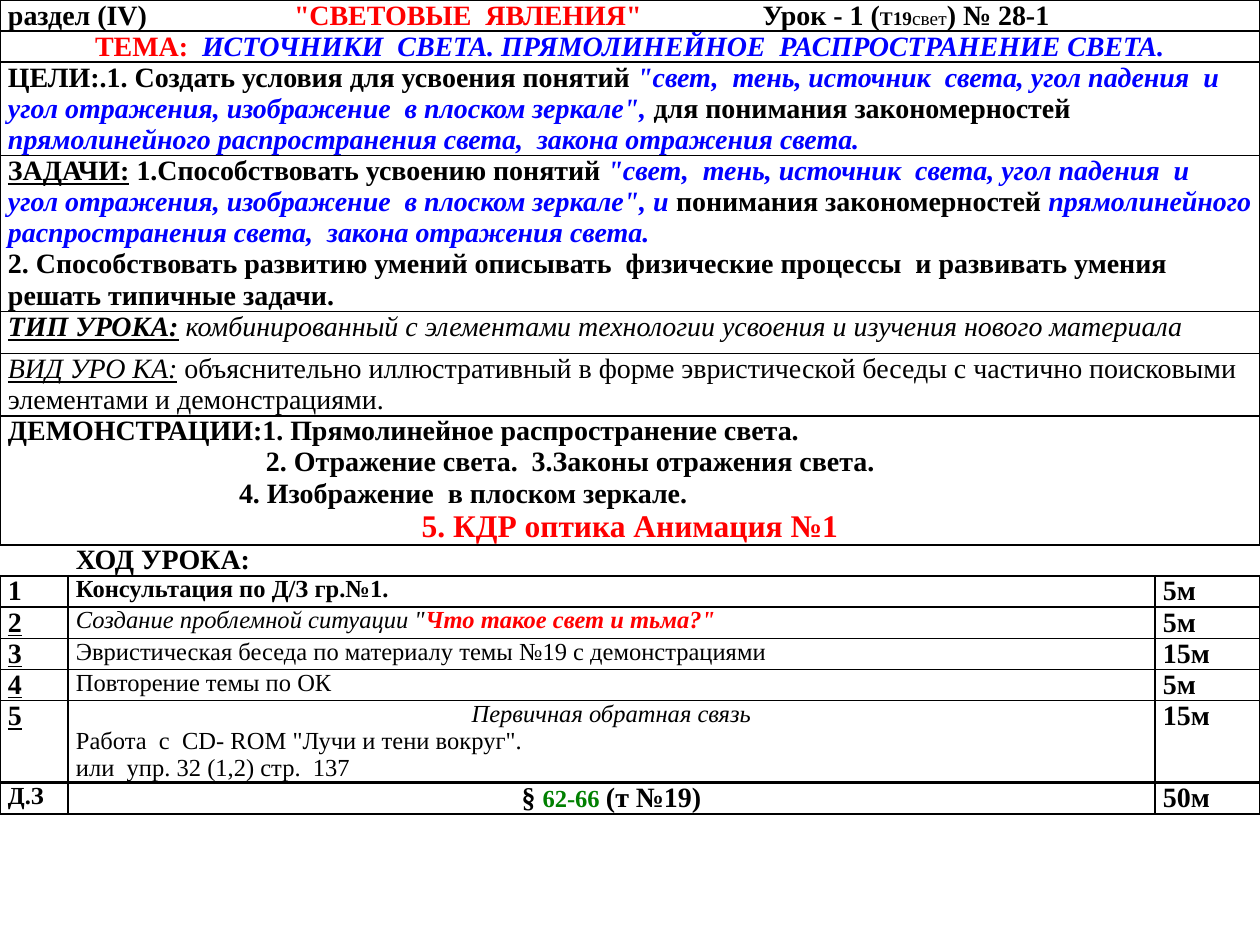
from lxml import etree
from pptx import Presentation
from pptx.dml.color import RGBColor
from pptx.enum.text import PP_ALIGN
from pptx.oxml.ns import qn
from pptx.util import Pt

PX = 914400 / 126
CENTER = PP_ALIGN.CENTER
FONT = "Times New Roman"
COLORS = {"black": "000000", "red": "FF0000", "blue": "0000FF", "green": "008000"}

COLUMNS = [68, 1087, 105]
HEADER_HEIGHTS = [31, 31, 93, 156, 42, 62, 129]
STEP_HEIGHTS = [31, 31, 31, 31, 31, 82, 31]
# Widths in points of the horizontal rules, from the top of the table down
RULES = [1, 1.5, 1.5, 1, 1, 1, 1.5, 1.5, 1.5, 1, 1, 1, 1, 1.5, 1.5]
FRAMED_HEADERS = (1, 6)
INSET = 8


def px(length):
    return round(length * PX)


def run(text, marks="b", color="black", size=16, spacing=0):
    """Describe a run; marks holds any of b, i and u, spacing is in points."""
    return text, marks, color, size, spacing


def para(*runs, align=None, indent=0):
    return runs, align, indent


TERMS = "\"свет,  тень, источник  света, угол падения  и  угол отражения, изображение  в плоском зеркале\", "
LAWS = "прямолинейного распространения света,  закона отражения света."

HEADERS = [
    [para(run("раздел (IV)"), run(" ", spacing=80),
          run("\"СВЕТОВЫЕ  ЯВЛЕНИЯ\"", color="red"), run(" ", spacing=65),
          run("Урок - 1 ("), run("Т19", size=11), run("свет", "", size=11),
          run(") № 28-1"))],
    [para(run("ТЕМА:  ", color="red"),
          run("ИСТОЧНИКИ  СВЕТА. ПРЯМОЛИНЕЙНОЕ  РАСПРОСТРАНЕНИЕ СВЕТА.", "bi", "blue"),
          align=CENTER)],
    [para(run("ЦЕЛИ:.1. Создать условия для усвоения понятий "),
          run(TERMS, "bi", "blue"),
          run("для понимания закономерностей  "), run(LAWS, "bi", "blue"))],
    [para(run("ЗАДАЧИ:", "bu"), run(" 1.Способствовать усвоению понятий "),
          run(TERMS + "и ", "bi", "blue"),
          run("понимания закономерностей"), run(" " + LAWS, "bi", "blue")),
     para(run("2. Способствовать развитию умений описывать  физические процессы  "
              "и развивать умения решать типичные задачи."))],
    [para(run("ТИП УРОКА:", "biu"),
          run(" комбинированный с элементами технологии усвоения "
              "и изучения нового материала", "i"))],
    [para(run("ВИД УРО КА:", "iu"),
          run(" объяснительно иллюстративный в форме эвристической беседы "
              "с частично поисковыми элементами и демонстрациями.", ""))],
    [para(run("ДЕМОНСТРАЦИИ:1. Прямолинейное распространение света.")),
     para(run("2. Отражение света.  3.Законы отражения света."), indent=258),
     para(run("4. Изображение  в плоском зеркале."), indent=231),
     para(run("5. КДР оптика Анимация №1", color="red", size=18), align=CENTER)],
]

STEPS = [
    (run("1"), [para(run("Консультация по Д/З гр.№1.", size=14))], "5м"),
    (run("2", "bu"), [para(run("Создание проблемной ситуации \"", "i", size=14),
                           run("Что такое свет и тьма?\"", "bi", "red", 14))], "5м"),
    (run("3", "bu"), [para(run("Эвристическая беседа по материалу темы №19 "
                               "с демонстрациями", "", size=14))], "15м"),
    (run("4", "bu"), [para(run("Повторение темы по ОК", "", size=14))], "5м"),
    (run("5", "bu"), [para(run("Первичная обратная связь", "i", size=14), align=CENTER),
                      para(run("Работа  с  CD- ROM \"Лучи и тени вокруг\".", "", size=14)),
                      para(run("или  упр. 32 (1,2) стр.  137", "", size=14))], "15м"),
    (run("Д.З", size=14), [para(run("§ "), run("62-66 ", color="green", size=14),
                                run("(т №19)"), align=CENTER)], "50м"),
]


def write(cell, paragraphs):
    frame = cell.text_frame
    for number, (runs, align, indent) in enumerate(paragraphs):
        paragraph = frame.add_paragraph() if number else frame.paragraphs[0]
        if align is not None:
            paragraph.alignment = align
        properties = paragraph._p.get_or_add_pPr()
        properties.set("marL", str(px(indent)))
        properties.set("indent", "0")
        for text, marks, color, size, spacing in runs:
            piece = paragraph.add_run()
            piece.text = text
            font = piece.font
            font.name, font.size = FONT, Pt(size)
            font.bold, font.italic, font.underline = (mark in marks for mark in "biu")
            font.color.rgb = RGBColor.from_string(COLORS[color])
            if spacing:
                piece._r.get_or_add_rPr().set("spc", str(spacing * 100))


def format_cell(cell, left, right, top, bottom):
    """Clear the fill, set the insets and draw borders of the given point widths."""
    cell.margin_left = cell.margin_right = px(INSET)
    cell.margin_top = cell.margin_bottom = 0
    properties = cell._tc.get_or_add_tcPr()
    for tag, width in zip(("lnL", "lnR", "lnT", "lnB"), (left, right, top, bottom)):
        line = etree.SubElement(properties, qn("a:" + tag), w=str(Pt(width)))
        if width:
            fill = etree.SubElement(line, qn("a:solidFill"))
            etree.SubElement(fill, qn("a:srgbClr"), val=COLORS["black"])
        else:
            etree.SubElement(line, qn("a:noFill"))
    cell.fill.background()


def side_widths(row):
    """Widths of the four vertical rules that cross a row."""
    title_row = len(HEADERS)
    if row < title_row:
        return [1.5 if row in FRAMED_HEADERS else 1] * 4
    if row == title_row:
        return [0] * 4
    return [1.5, 1, 1, 1.5] if row == title_row + len(STEPS) else [1.5, 1.5, 1, 1]


def write_headers(table):
    for row, paragraphs in enumerate(HEADERS):
        table.cell(row, 0).merge(table.cell(row, len(COLUMNS) - 1))
        write(table.cell(row, 0), paragraphs)


def write_steps(table, title_row):
    write(table.cell(title_row, 1), [para(run("ХОД УРОКА:"))])
    for column in (0, 2):
        blank = table.cell(title_row, column).text_frame.paragraphs[0]
        etree.SubElement(blank._p, qn("a:endParaRPr"), sz="1200")
    for row, (number, activity, duration) in enumerate(STEPS, title_row + 1):
        write(table.cell(row, 0), [para(number)])
        write(table.cell(row, 1), activity)
        write(table.cell(row, 2), [para(run(duration))])


def add_lesson_plan(slide, left, top):
    heights = HEADER_HEIGHTS + STEP_HEIGHTS
    table = slide.shapes.add_table(len(heights), len(COLUMNS), px(left), px(top),
                                   px(sum(COLUMNS)), px(sum(heights))).table
    table.first_row = table.horz_banding = False
    for column, width in zip(table.columns, COLUMNS):
        column.width = px(width)
    for row, height in enumerate(heights):
        table.rows[row].height = px(height)
        sides = side_widths(row)
        for column in range(len(COLUMNS)):
            format_cell(table.cell(row, column), sides[column], sides[column + 1],
                        RULES[row], RULES[row + 1])
    write_headers(table)
    write_steps(table, len(HEADERS))


def main():
    presentation = Presentation()
    presentation.slide_width, presentation.slide_height = px(1260), px(945)
    slide = presentation.slides.add_slide(presentation.slide_layouts[6])
    add_lesson_plan(slide, 0, 0)
    presentation.save("out.pptx")


if __name__ == "__main__":
    main()
